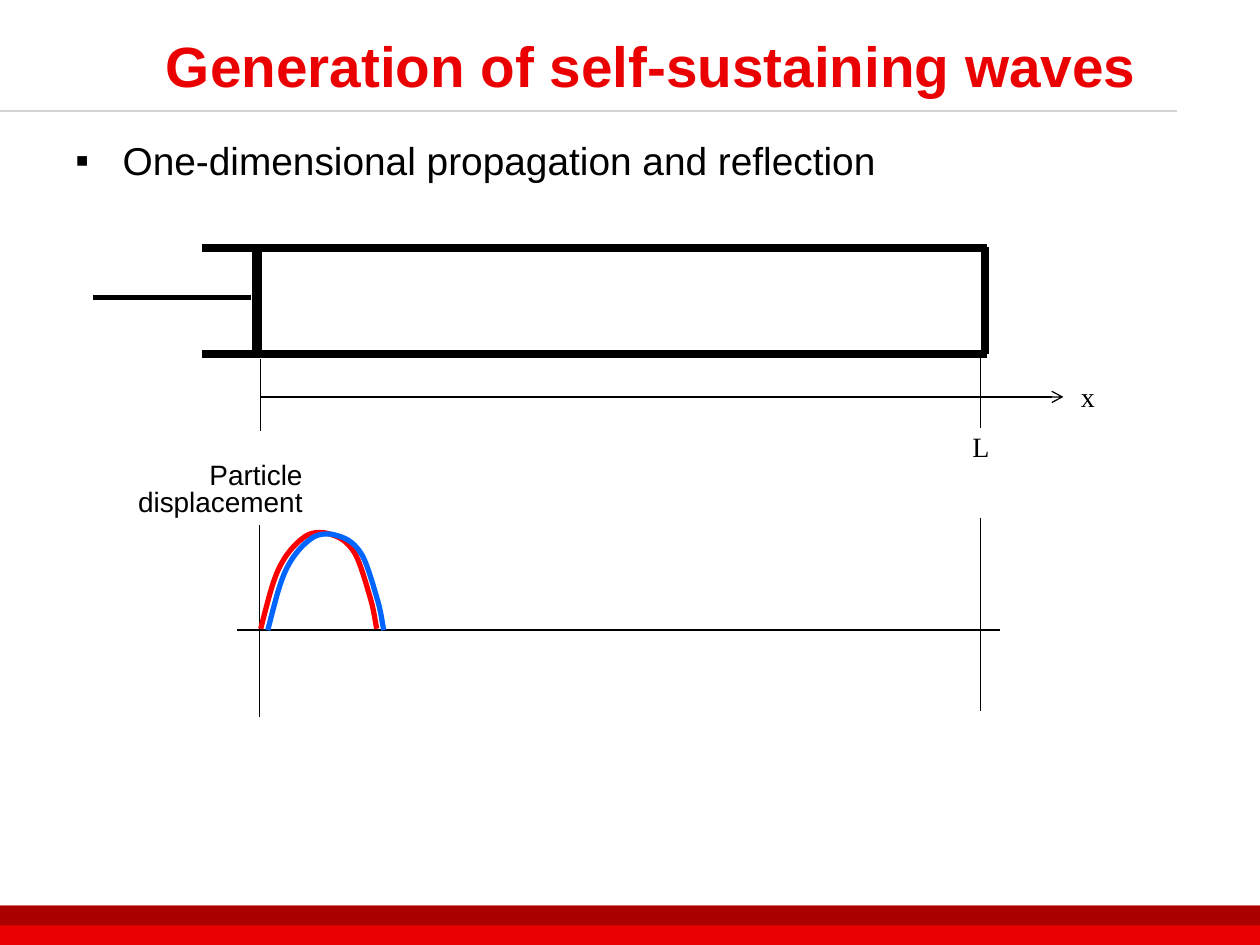
from lxml.etree import SubElement
from pptx import Presentation
from pptx.dml.color import RGBColor
from pptx.enum.shapes import MSO_CONNECTOR, MSO_SHAPE
from pptx.enum.text import MSO_ANCHOR, PP_ALIGN
from pptx.oxml.ns import qn
from pptx.util import Pt

HUES = {
    "red": "EA0000", "dark": "AA0000", "rule": "D4D4D4",
    "ink": "000000", "wave": "FF0000", "next": "0066FF",
}

# x1, y1, x2, y2, width
TUBE = [
    (115.2, 141.8, 563.8, 141.8, 4.5),
    (563, 141.1, 563, 202.3, 4.5),
    (563.8, 202.3, 115.2, 202.3, 4.5),
    (146.9, 144, 146.9, 200.2, 6),
    (143.3, 169.9, 53.3, 169.9, 3),
]
THIN = [
    (149, 205.2, 149, 246.2),
    (560.2, 203.8, 560.2, 244.8),
    (148.3, 300.2, 148.3, 409.7),
    (560.2, 295.9, 560.2, 406.1),
    (135.4, 360, 571.7, 360),
]

# Bezier knots of the pulse: a start, then two controls and an end per piece
START = (149, 359.3)
PULSE = [
    ((152.6, 345.6), (155.5, 332.6), (159.8, 324)),
    ((164.2, 315.4), (169.2, 310.3), (174.2, 306.7)),
    ((178.6, 303.8), (184.3, 303.8), (188.6, 305.3)),
    ((193.7, 306.7), (198, 308.9), (202.3, 315.4)),
    ((205.9, 321.1), (209.5, 334.8), (211.7, 342)),
    ((213.8, 349.2), (214.6, 356.4), (215.3, 359.3)),
]


def color(name):
    return RGBColor.from_string(HUES[name])


def add_band(slide, top, height, hue):
    band = slide.shapes.add_shape(
        MSO_SHAPE.RECTANGLE, Pt(0), Pt(top), Pt(720), Pt(height))
    band.shadow.inherit = False
    band.fill.solid()
    band.fill.fore_color.rgb = color(hue)
    band.line.fill.background()


def add_line(slide, x1, y1, x2, y2, width=0.75, hue="ink", arrow=False):
    line = slide.shapes.add_connector(
        MSO_CONNECTOR.STRAIGHT, Pt(x1), Pt(y1), Pt(x2), Pt(y2))
    line.line.width = Pt(width)
    line.line.color.rgb = color(hue)
    if arrow:
        SubElement(line.line._get_or_add_ln(), qn("a:tailEnd"), type="arrow")
    SubElement(line._element.spPr, qn("a:effectLst"))


def add_text(slide, box, text, size, font="Arial", hue="ink", bold=False,
             align=PP_ALIGN.LEFT, wrap=True):
    shape = slide.shapes.add_textbox(*[Pt(n) for n in box])
    frame = shape.text_frame
    frame.word_wrap = wrap
    frame.text = text
    for para in frame.paragraphs:
        para.alignment = align
        for run in para.runs:
            run.font.name = font
            run.font.size = Pt(size)
            run.font.bold = bold
            run.font.color.rgb = color(hue)
    return frame


def add_bullet(para, mark, indent):
    props = para._p.get_or_add_pPr()
    props.set("marL", str(Pt(indent)))
    props.set("indent", str(-Pt(indent)))
    SubElement(props, qn("a:buFont"), typeface="Arial")
    SubElement(props, qn("a:buChar"), char=mark)


def trace(start, curves, steps=10):
    """Return points along a chain of cubic Bezier curves."""
    points = [start]
    for a, b, end in curves:
        for i in range(1, steps + 1):
            t = i / steps
            u = 1 - t
            points.append(tuple(
                u**3 * p + 3 * u * u * t * q + 3 * u * t * t * r + t**3 * s
                for p, q, r, s in zip(start, a, b, end)))
        start = end
    return points


def add_pulse(slide, hue, dx=0, dy=0):
    points = [(Pt(x + dx), Pt(y + dy)) for x, y in trace(START, PULSE)]
    form = slide.shapes.build_freeform(*points[0])
    form.add_line_segments(points[1:], close=False)
    pulse = form.convert_to_shape()
    pulse.shadow.inherit = False
    pulse.fill.background()
    pulse.line.width = Pt(3)
    pulse.line.color.rgb = color(hue)


def main():
    prs = Presentation()
    prs.slide_width, prs.slide_height = Pt(720), Pt(540)
    slide = prs.slides.add_slide(prs.slide_layouts[6])

    add_band(slide, 517.5, 22.5, "red")
    add_band(slide, 517.5, 11.3, "dark")
    add_line(slide, 0, 63.4, 672.5, 63.4, 1.5, "rule")

    title = add_text(slide, (87.8, 5.8, 629.3, 62.6),
                     "Generation of self-sustaining waves", 32.4,
                     hue="red", bold=True)
    title.vertical_anchor = MSO_ANCHOR.MIDDLE
    body = add_text(slide, (36, 74.5, 648, 41),
                    "One-dimensional propagation and reflection", 22.2)
    add_bullet(body.paragraphs[0], "▪", 27)

    for wall in TUBE:
        add_line(slide, *wall)
    for tick in THIN:
        add_line(slide, *tick)
    add_line(slide, 149, 226.8, 607.7, 226.8, arrow=True)
    for box, text in [((610.6, 213.1, 22.3, 26.6), "x"),
                      ((548.6, 241.9, 24.5, 26.6), "L")]:
        add_text(slide, box, text, 16, "Times New Roman", wrap=False)

    add_pulse(slide, "wave")
    add_pulse(slide, "next", 4, 0.8)
    label = add_text(slide, (38.2, 258, 141.8, 41.8),
                     "Particle\ndisplacement", 16, align=PP_ALIGN.RIGHT)
    label.paragraphs[1].line_spacing = Pt(15.4)

    prs.save("out.pptx")


if __name__ == "__main__":
    main()
